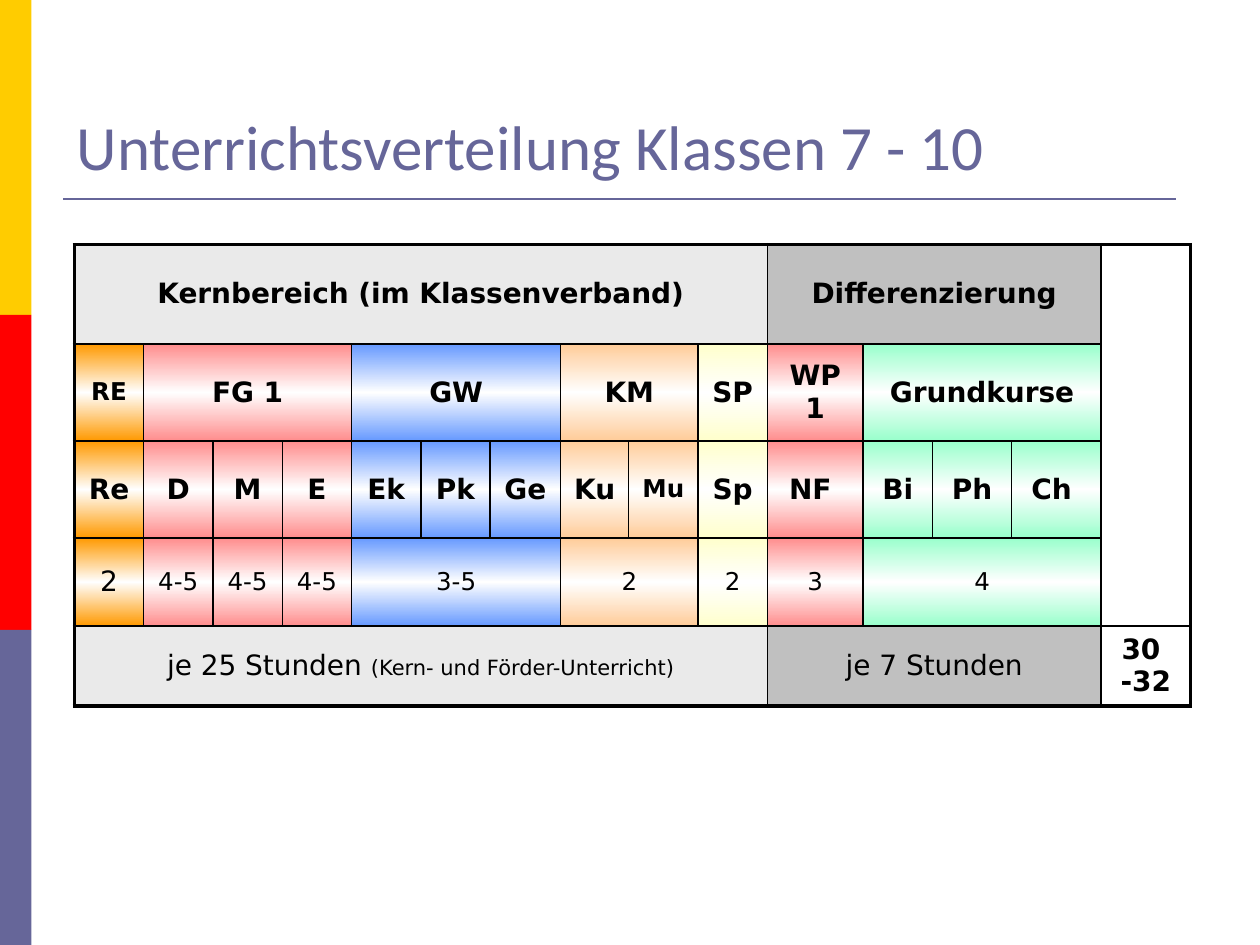
from pptx import Presentation
from pptx.dml.color import RGBColor
from pptx.enum.shapes import MSO_CONNECTOR, MSO_SHAPE
from pptx.enum.text import MSO_ANCHOR, PP_ALIGN
from pptx.oxml import parse_xml
from pptx.oxml.ns import nsdecls
from pptx.util import Inches, Pt
from lxml import etree

RECTANGLE = MSO_SHAPE.RECTANGLE
STRAIGHT = MSO_CONNECTOR.STRAIGHT
MIDDLE = MSO_ANCHOR.MIDDLE
CENTER = PP_ALIGN.CENTER

COLORS = {
    "yellow": "FFCC00", "red": "FF0000", "violet": "666699",
    "black": "000000", "white": "FFFFFF", "light": "EAEAEA", "gray": "C0C0C0",
}
# Subject areas run from their colour to white and back.
AREAS = {
    "religion": "FF9900", "language": "FF8D8D", "society": "6699FF",
    "arts": "FFCC99", "sport": "FFFFCC", "science": "99FFCC",
}
COLUMNS = [0.55] * 6 + [0.56, 0.54, 0.55, 0.55, 0.76, 0.55, 0.63, 0.71, 0.71]
ROWS = [0.79, 0.77, 0.77, 0.7, 0.6]
THIN, THICK = 1, 2.25

# Each entry: column span, fill, bold, runs as (text, size)
TIMETABLE = [
    [(10, "light", True, [("Kernbereich (im Klassenverband)", 16)]),
     (4, "gray", True, [("Differenzierung", 16)])],
    [(1, "religion", True, [("RE", 14)]),
     (3, "language", True, [("FG 1", 16)]),
     (3, "society", True, [("GW", 16)]),
     (2, "arts", True, [("KM", 16)]),
     (1, "sport", True, [("SP", 16)]),
     (1, "language", True, [("WP1", 16)]),
     (3, "science", True, [("Grundkurse", 16)])],
    [(1, area, True, [(name, 14 if name == "Mu" else 16)])
     for area, names in [
         ("religion", ["Re"]), ("language", ["D", "M", "E"]),
         ("society", ["Ek", "Pk", "Ge"]), ("arts", ["Ku", "Mu"]),
         ("sport", ["Sp"]), ("language", ["NF "]),
         ("science", ["Bi", "Ph", "Ch "])]
     for name in names],
    [(1, "religion", False, [("2", 16)])]
    + [(1, "language", False, [("4-5", 14)])] * 3
    + [(3, "society", False, [("3-5", 14)]),
       (2, "arts", False, [("2", 14)]),
       (1, "sport", False, [("2", 14)]),
       (1, "language", False, [("3", 14)]),
       (3, "science", False, [("4", 14)])],
    [(10, "light", False, [("je 25 Stunden ", 16),
                           ("(Kern- und Förder-Unterricht)", 12)]),
     (4, "gray", False, [("je 7 Stunden", 16)]),
     (1, None, True, [("30  -32", 16)])],
]


def add_span(para, text, size, font, color, bold=False):
    span = para.add_run()
    span.text = text
    span.font.size = Pt(size)
    span.font.name = font
    span.font.bold = bold
    span.font.color.rgb = RGBColor.from_string(COLORS[color])


def add_side_bars(page):
    for index, color in enumerate(("yellow", "red", "violet")):
        bar = page.shapes.add_shape(RECTANGLE, 0, Inches(2.5 * index),
                                    Inches(0.25), Inches(2.5))
        bar.shadow.inherit = False
        bar.fill.solid()
        bar.fill.fore_color.rgb = RGBColor.from_string(COLORS[color])
        bar.line.fill.background()


def add_title(page, text):
    box = page.shapes.add_textbox(Inches(0.51), Inches(0.83),
                                  Inches(8.68), Inches(0.64))
    frame = box.text_frame
    frame.word_wrap = True
    frame.vertical_anchor = MIDDLE
    add_span(frame.paragraphs[0], text, 36, "Calibri", "violet")

    rule = page.shapes.add_connector(STRAIGHT, Inches(0.5), Inches(1.58),
                                     Inches(9.33), Inches(1.58))
    rule.line.color.rgb = RGBColor.from_string(COLORS["violet"])
    rule.line.width = Pt(1.5)
    etree.SubElement(rule._element.spPr,
                     "{http://schemas.openxmlformats.org/drawingml/2006/main}effectLst")


def add_borders(cell, row, column):
    """Draw thin cell lines, thick where they lie on the table's edge."""
    on_edge = {"L": column == 0, "R": column == len(COLUMNS) - 1,
               "T": row == 0, "B": row == len(ROWS) - 1}
    properties = cell._tc.get_or_add_tcPr()
    for side, thick in on_edge.items():
        width = Pt(THICK if thick else THIN)
        properties.append(parse_xml(
            f'<a:ln{side} {nsdecls("a")} w="{width}"><a:solidFill>'
            f'<a:srgbClr val="{COLORS["black"]}"/></a:solidFill></a:ln{side}>'))


def fill_cell(cell, name):
    if name in AREAS:
        stops = "".join(
            f'<a:gs pos="{position}"><a:srgbClr val="{color}"/></a:gs>'
            for position, color in ((0, AREAS[name]), (50000, COLORS["white"]),
                                    (100000, AREAS[name])))
        cell._tc.get_or_add_tcPr().append(parse_xml(
            f'<a:gradFill {nsdecls("a")} rotWithShape="1"><a:gsLst>{stops}</a:gsLst>'
            '<a:lin ang="5400000" scaled="1"/></a:gradFill>'))
    elif name:
        cell.fill.solid()
        cell.fill.fore_color.rgb = RGBColor.from_string(COLORS[name])
    else:
        cell.fill.background()


def write_cell(cell, spans, bold):
    cell.vertical_anchor = MIDDLE
    para = cell.text_frame.paragraphs[0]
    para.alignment = CENTER
    for text, size in spans:
        add_span(para, text, size, "DejaVu Sans", "black", bold)


def add_timetable(page):
    frame = page.shapes.add_table(len(ROWS), len(COLUMNS), Inches(0.59), Inches(1.94),
                                  Inches(sum(COLUMNS)), Inches(sum(ROWS)))
    table = frame.table
    table.first_row = table.horz_banding = False
    for column, width in zip(table.columns, COLUMNS):
        column.width = Inches(width)
    for row, height in zip(table.rows, ROWS):
        row.height = Inches(height)

    last = len(COLUMNS) - 1
    table.cell(0, last).merge(table.cell(len(ROWS) - 2, last))
    for row, entries in enumerate(TIMETABLE):
        start = 0
        for width, fill, bold, spans in entries:
            end = start + width
            if width > 1:
                table.cell(row, start).merge(table.cell(row, end - 1))
            for column in range(start, end):
                add_borders(table.cell(row, column), row, column)
                fill_cell(table.cell(row, column), fill)
            write_cell(table.cell(row, start), spans, bold)
            start = end
        if start == last:
            add_borders(table.cell(row, last), row, last)
            fill_cell(table.cell(row, last), None)


def main():
    deck = Presentation()
    deck.slide_width, deck.slide_height = Inches(10), Inches(7.5)
    page = deck.slides.add_slide(deck.slide_layouts[6])
    add_side_bars(page)
    add_title(page, "Unterrichtsverteilung Klassen 7 - 10")
    add_timetable(page)
    deck.save("out.pptx")


if __name__ == "__main__":
    main()
